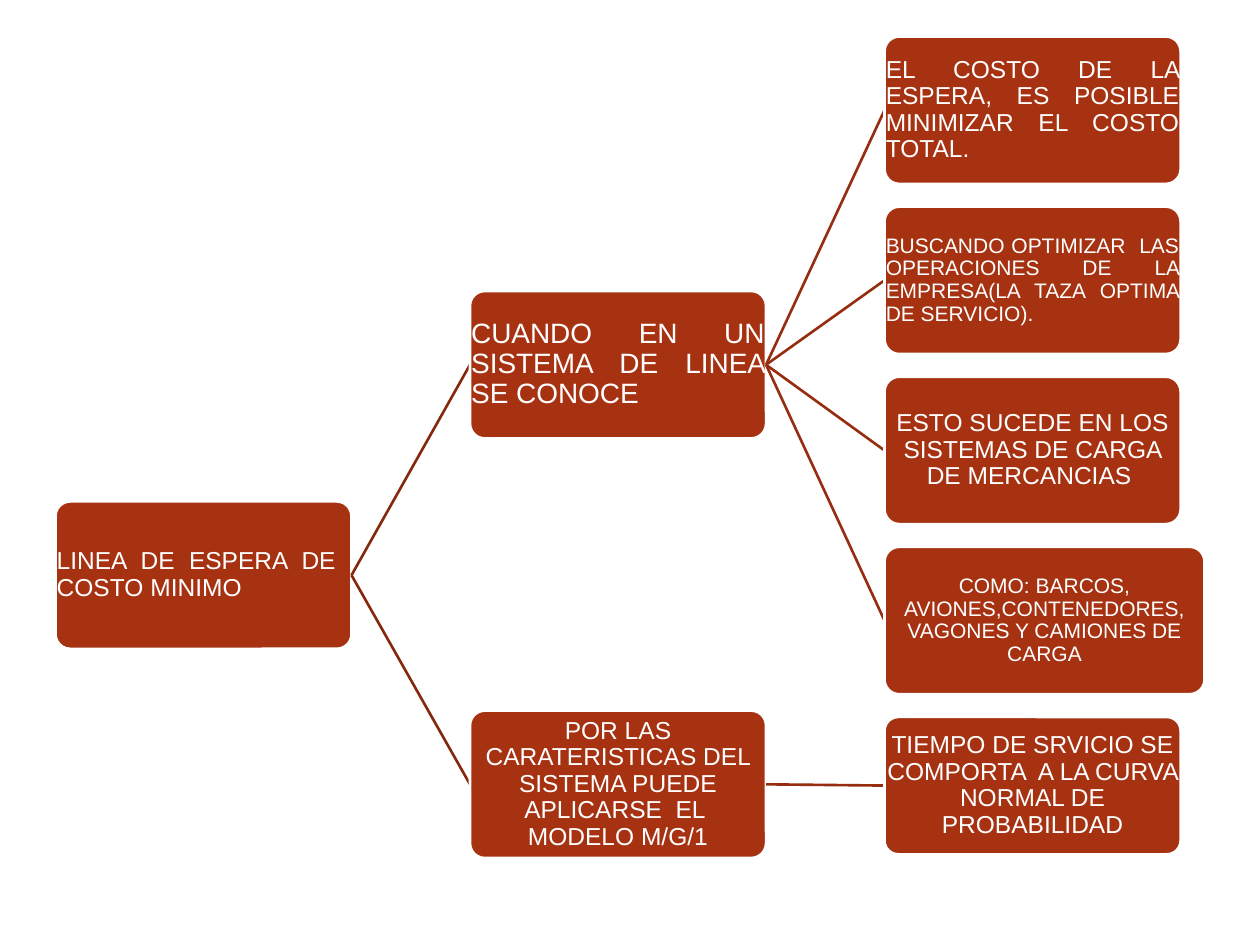
from lxml import etree
from pptx import Presentation
from pptx.dml.color import RGBColor
from pptx.enum import shapes, text
from pptx.oxml import ns
from pptx.util import Inches, Pt

COLORS = {"box": "A63212", "edge": "FFFFFF", "text": "FFFFFF",
          "trunk": "85280E", "branch": "972D10"}
WIDE, HIGH = 2.35, 1.17
LEFT, COL = 0.44, 3.29      # first column and column step
TOP, ROW = 0.29, 1.35       # first leaf and leaf step
JUST, MID = text.PP_ALIGN.JUSTIFY, text.PP_ALIGN.CENTER


def node(words, top, size=14, align=MID, wide=WIDE, high=HIGH, kids=()):
    return {"words": words, "top": top, "size": size, "align": align,
            "wide": wide, "high": high, "kids": kids}


def leaf(row, words, **form):
    return node(words, TOP + row * ROW, **form)


TREE = node("LINEA DE ESPERA DE  COSTO MINIMO", 3.98, align=JUST, kids=[
    node("CUANDO EN UN SISTEMA DE LINEA SE CONOCE", 2.31, 16, JUST, kids=[
        leaf(0, "EL COSTO DE LA ESPERA, ES POSIBLE MINIMIZAR EL COSTO TOTAL.",
             align=JUST),
        leaf(1, "BUSCANDO OPTIMIZAR  LAS OPERACIONES DE LA EMPRESA"
                "(LA TAZA OPTIMA DE SERVICIO).", size=12, align=JUST),
        leaf(2, "ESTO SUCEDE EN LOS SISTEMAS DE CARGA DE MERCANCIAS "),
        leaf(3, "COMO: BARCOS, AVIONES,CONTENEDORES, VAGONES Y CAMIONES "
                "DE CARGA", size=12, wide=2.54),
    ]),
    node("POR LAS CARATERISTICAS DEL SISTEMA PUEDE APLICARSE  EL  "
         "MODELO M/G/1", 5.64, kids=[
             leaf(4, "TIEMPO DE SRVICIO SE COMPORTA  A LA CURVA NORMAL "
                     "DE PROBABILIDAD", high=1.09),
         ]),
])


def color(name):
    return RGBColor.from_string(COLORS[name])


def put(item, form):
    for name, value in form.items():
        setattr(item, name, value)


def add_box(slide, area):
    box = slide.shapes.add_shape(shapes.MSO_SHAPE.ROUNDED_RECTANGLE, *area)
    box.adjustments[0] = 0.1
    box.shadow.inherit = False
    box.fill.solid()
    box.fill.fore_color.rgb = color("box")
    box.line.color.rgb = color("edge")
    box.line.width = Pt(1.5)
    return box


def add_label(slide, area, item):
    # The label spans the full box, so lines run right up to its edges
    frame = slide.shapes.add_textbox(*area).text_frame
    edge = Inches(0.01)
    put(frame, {"word_wrap": True, "vertical_anchor": text.MSO_ANCHOR.MIDDLE,
                "margin_left": edge, "margin_right": edge,
                "margin_top": edge, "margin_bottom": edge})
    para = frame.paragraphs[0]
    put(para, {"alignment": item["align"], "line_spacing": 0.9})
    run = para.add_run()
    run.text = item["words"]
    put(run.font, {"name": "Arial", "size": Pt(item["size"])})
    run.font.color.rgb = color("text")


def add_link(slide, start, tint):
    link = slide.shapes.add_connector(shapes.MSO_CONNECTOR.STRAIGHT, 0, 0, 0, 0)
    link.begin_connect(start, 3)
    link.line.color.rgb = color(tint)
    link.line.width = Pt(1.5)
    etree.SubElement(link._element.spPr, ns.qn("a:effectLst"))
    return link


def add_node(slide, item, depth=0):
    area = [Inches(n) for n in (LEFT + depth * COL, item["top"],
                                item["wide"], item["high"])]
    box = add_box(slide, area)
    add_label(slide, area, item)
    for kid in item["kids"]:
        # The link goes in first, to lie behind the box it leads to
        link = add_link(slide, box, "branch" if depth else "trunk")
        link.end_connect(add_node(slide, kid, depth + 1), 1)
    return box


def main():
    deck = Presentation()
    put(deck, {"slide_width": Inches(10), "slide_height": Inches(7.5)})
    slide = deck.slides.add_slide(deck.slide_layouts[6])
    add_node(slide, TREE)
    deck.save("out.pptx")


if __name__ == "__main__":
    main()
